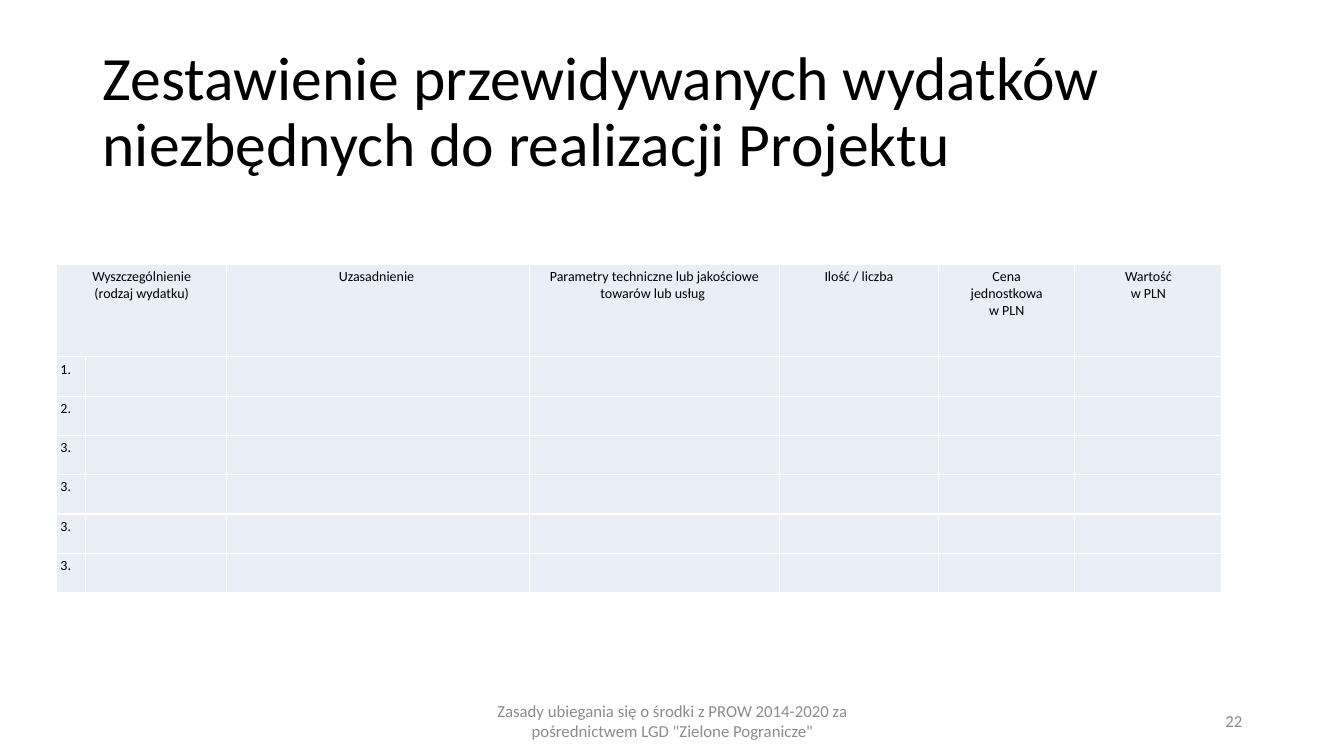
from lxml import etree
from pptx import Presentation
from pptx.dml.color import RGBColor
from pptx.enum import text
from pptx.oxml import ns
from pptx.util import Inches, Pt

PALE, WHITE, BLACK, GREY = "EAEFF7", "FFFFFF", "000000", "8C8C8C"
LEFT, CENTER, RIGHT = text.PP_ALIGN.LEFT, text.PP_ALIGN.CENTER, text.PP_ALIGN.RIGHT


def write(tf, content, size=10, color=BLACK, align=LEFT, spacing=1.0,
          anchor=text.MSO_ANCHOR.MIDDLE):
    tf.word_wrap = True
    tf.vertical_anchor = anchor
    for i, line in enumerate(content.split("\n")):
        p = tf.paragraphs[0] if i == 0 else tf.add_paragraph()
        p.alignment = align
        p.line_spacing = spacing
        r = p.add_run()
        r.text = line
        r.font.name = "Calibri"
        r.font.size = Pt(size)
        r.font.color.rgb = RGBColor.from_string(color)


def style_cell(cell):
    cell.margin_left = cell.margin_right = Inches(0.04)
    cell.margin_top = cell.margin_bottom = Inches(0.04)
    cell.fill.solid()
    cell.fill.fore_color.rgb = RGBColor.from_string(PALE)
    tcPr = cell._tc.get_or_add_tcPr()
    for i, side in enumerate(("lnL", "lnR", "lnT", "lnB")):
        ln = etree.Element(ns.qn("a:" + side), w=str(Pt(1)))
        fill = etree.SubElement(ln, ns.qn("a:solidFill"))
        etree.SubElement(fill, ns.qn("a:srgbClr"), val=WHITE)
        tcPr.insert(i, ln)


prs = Presentation()
prs.slide_width, prs.slide_height = Inches(13.33), Inches(7.5)
s = prs.slides.add_slide(prs.slide_layouts[6])

title = s.shapes.add_textbox(Inches(0.92), Inches(0.4), Inches(11.5), Inches(1.45))
write(title.text_frame, "Zestawienie przewidywanych wydatków niezbędnych do realizacji Projektu",
      size=44, spacing=0.9)

footer = s.shapes.add_textbox(Inches(4.42), Inches(6.95), Inches(4.5), Inches(0.4))
write(footer.text_frame,
      'Zasady ubiegania się o środki z PROW 2014-2020 za pośrednictwem LGD "Zielone Pogranicze"',
      size=12, color=GREY, align=CENTER)

number = s.shapes.add_textbox(Inches(9.42), Inches(6.95), Inches(3), Inches(0.4))
write(number.text_frame, "22", size=12, color=GREY, align=RIGHT)

widths = [0.29, 1.4, 3, 2.48, 1.58, 1.35, 1.46]
heights = [0.92] + [0.39] * 6
headers = {
    0: "Wyszczególnienie\n(rodzaj wydatku)",
    2: "Uzasadnienie ",
    3: "Parametry techniczne lub jakościowe\ntowarów lub usług ",
    4: "Ilość / liczba",
    5: "Cena\njednostkowa\nw PLN",
    6: "Wartość\nw PLN",
}
labels = ["1.", "2.", "3.", "3.", "3.", "3."]

table = s.shapes.add_table(len(heights), len(widths), Inches(0.56), Inches(2.62),
                           Inches(sum(widths)), Inches(sum(heights))).table
for col, width in zip(table.columns, widths):
    col.width = Inches(width)
for row, height in zip(table.rows, heights):
    row.height = Inches(height)
for cell in table.iter_cells():
    style_cell(cell)

table.cell(0, 0).merge(table.cell(0, 1))
for i, header in headers.items():
    cell = table.cell(0, i)
    write(cell.text_frame, header, align=CENTER, anchor=text.MSO_ANCHOR.TOP)
for i, label in enumerate(labels, 1):
    write(table.cell(i, 0).text_frame, label, anchor=text.MSO_ANCHOR.TOP)

prs.save("out.pptx")
